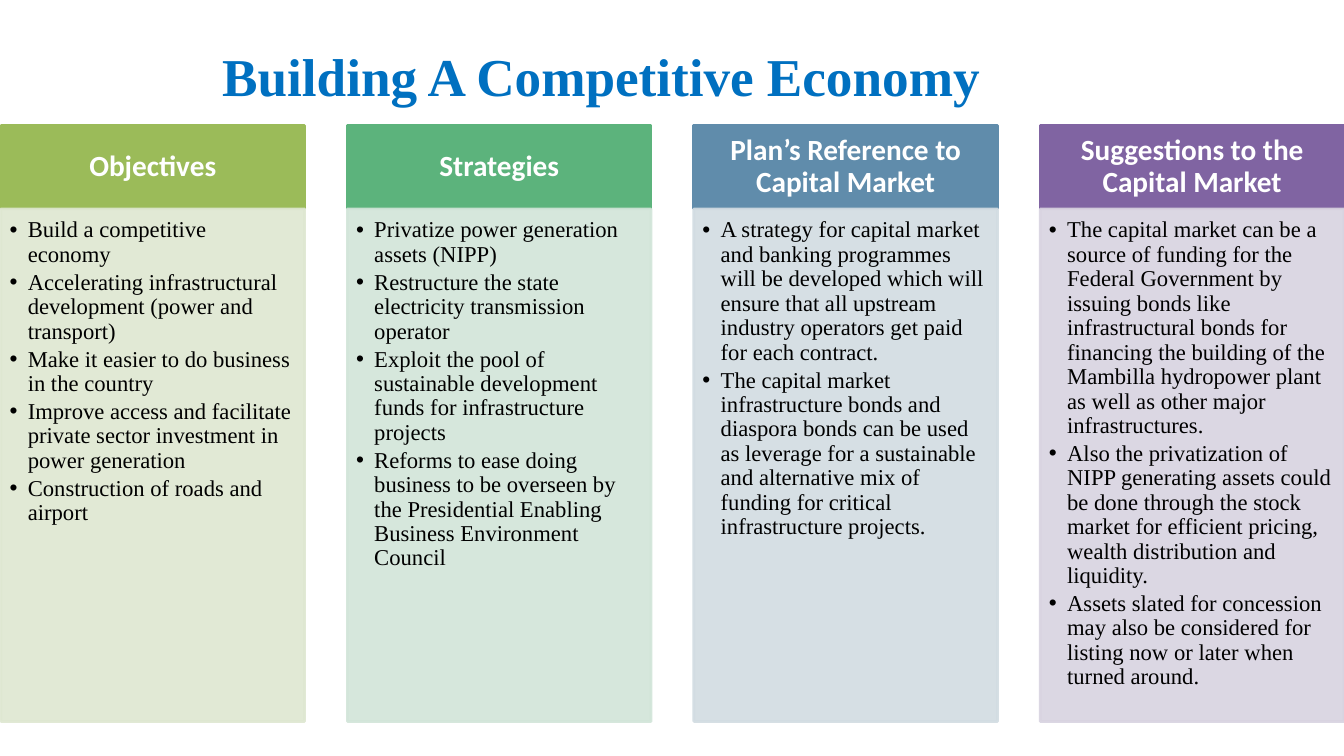
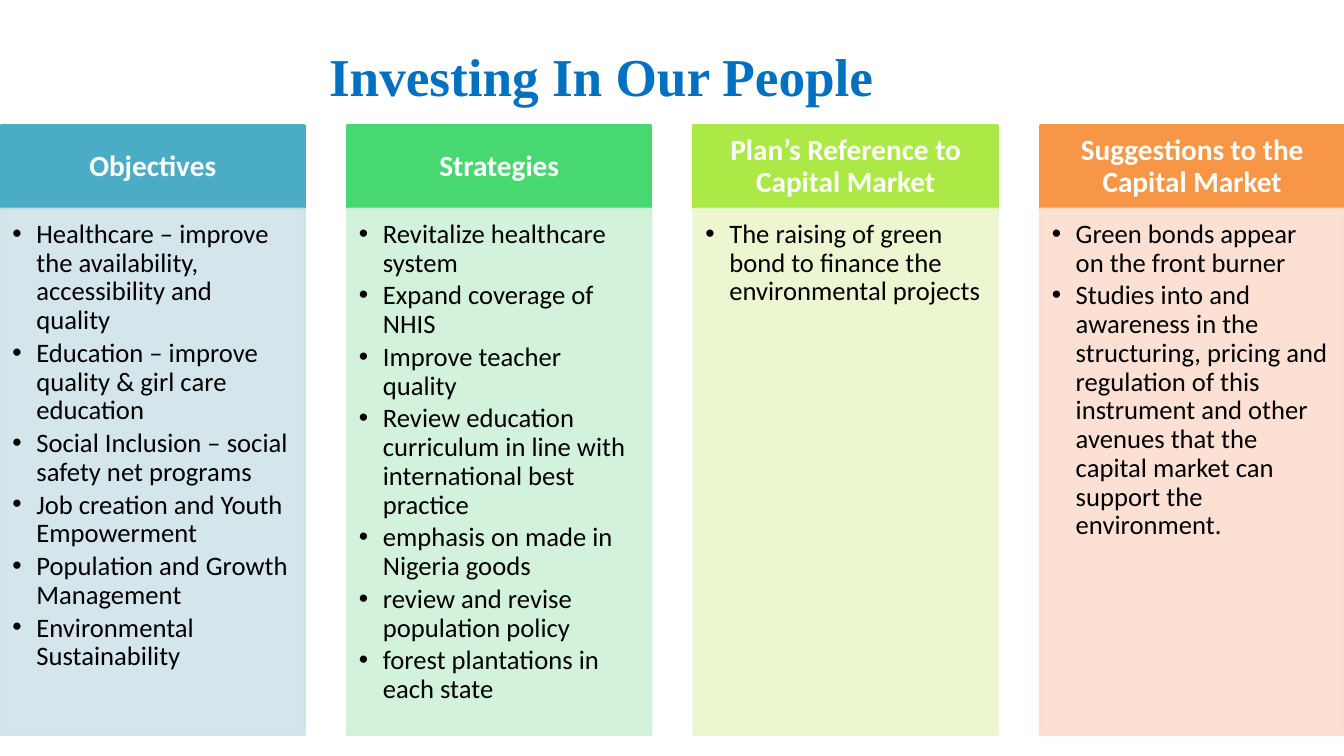
from lxml import etree
from pptx import Presentation
from pptx.dml.color import RGBColor
from pptx.enum.shapes import MSO_SHAPE
from pptx.enum.text import MSO_ANCHOR, PP_ALIGN
from pptx.oxml.ns import qn
from pptx.util import Inches, Pt

RECTANGLE = MSO_SHAPE.RECTANGLE
TOP, MIDDLE = MSO_ANCHOR.TOP, MSO_ANCHOR.MIDDLE
LEFT, CENTER = PP_ALIGN.LEFT, PP_ALIGN.CENTER

SERIF, SANS = "Times New Roman", "Calibri"
TITLE_BLUE, WHITE, BLACK = "0070C0", "FFFFFF", "000000"
HEADINGS = [
    "Objectives",
    "Strategies",
    "Plan’s Reference to Capital Market",
    "Suggestions to the Capital Market",
]

SLIDE_W, SLIDE_H = 14.03, 7.89
COLUMN_LEFT, COLUMN_W = 0.01, 3.17
COLUMN_PITCH = (SLIDE_W - COLUMN_W - COLUMN_LEFT) / (len(HEADINGS) - 1)
HEADER_TOP, HEADER_H = 1.31, 0.87
BODY_TOP = HEADER_TOP + HEADER_H
BODY_OPACITY = 90

# Each column is (header colour, body colour, bullet points).
SLIDES = [
    {
        "title": "Building A Competitive Economy",
        "font": SERIF, "size": 17, "indent": 0.19, "body_height": 5.35,
        "insets": (0.09, 0.1, 0.12, 0.15),
        "columns": [
            ("9BBB59", "DEE7D1", [
                "Build a competitive economy",
                "Accelerating infrastructural development (power and transport)",
                "Make it easier to do business in the country",
                "Improve access and facilitate private sector investment in "
                "power generation",
                "Construction of roads and airport",
            ]),
            ("5CB37C", "D2E5D9", [
                "Privatize power generation assets (NIPP)",
                "Restructure the state electricity transmission operator",
                "Exploit the pool of sustainable development funds for "
                "infrastructure projects",
                "Reforms to ease doing business to be overseen by the "
                "Presidential Enabling Business Environment Council",
            ]),
            ("608CAB", "D2DCE2", [
                "A strategy for capital market and banking programmes will be "
                "developed which will ensure that all upstream industry "
                "operators get paid for each contract.",
                "The capital market infrastructure bonds and diaspora bonds "
                "can be used as leverage for a sustainable and alternative mix "
                "of funding for critical infrastructure projects.",
            ]),
            ("8064A2", "D8D3E0", [
                "The capital market can be a source of funding for the Federal "
                "Government by issuing bonds like infrastructural bonds for "
                "financing the building of the Mambilla hydropower plant as "
                "well as other major infrastructures.",
                "Also the privatization of NIPP generating assets could be "
                "done through the stock market for efficient pricing, wealth "
                "distribution and liquidity.",
                "Assets slated for concession may also be considered for "
                "listing now or later when turned around.",
            ]),
        ],
    },
    {
        "title": "Investing In Our People",
        "font": SANS, "size": 20, "indent": 0.25, "body_height": 5.49,
        "insets": (0.12, 0.12, 0.16, 0.17),
        "columns": [
            ("4BACC6", "D0E3EA", [
                "Healthcare – improve the availability, accessibility and quality",
                "Education – improve quality & girl care education",
                "Social Inclusion – social safety net programs",
                "Job creation and Youth Empowerment",
                "Population and Growth Management",
                "Environmental Sustainability",
            ]),
            ("47D872", "CFF1D9", [
                "Revitalize healthcare system",
                "Expand coverage of NHIS",
                "Improve teacher quality",
                "Review education curriculum in line with international best "
                "practice",
                "emphasis on made in Nigeria goods",
                "review and revise population policy",
                "forest plantations in each state",
            ]),
            ("ACE946", "EBF7CE", [
                "The raising of green bond to finance the environmental projects",
            ]),
            ("F79646", "FCDDCF", [
                "Green bonds appear on the front burner",
                "Studies into and awareness in the structuring, pricing and "
                "regulation of this instrument and other avenues that the "
                "capital market can support the environment.",
            ]),
        ],
    },
]


def rgb(color):
    return RGBColor.from_string(color)


def add_bullet(para, indent):
    """Give the paragraph a round bullet with a hanging indent in inches."""
    para.level = 1
    props = para._p.get_or_add_pPr()
    props.set("marL", str(Inches(indent)))
    props.set("indent", str(-Inches(indent)))
    etree.SubElement(props, qn("a:buFont"), typeface="Arial")
    etree.SubElement(props, qn("a:buChar"), char="•")


def write_text(box, lines, font, size, color, insets, bold=False, align=LEFT,
               anchor=TOP, line_spacing=None, space_after=0, indent=None):
    """Fill a shape with paragraphs; insets run left, top, right, bottom."""
    frame = box.text_frame
    frame.word_wrap = True
    frame.vertical_anchor = anchor
    (frame.margin_left, frame.margin_top,
     frame.margin_right, frame.margin_bottom) = map(Inches, insets)
    for index, line in enumerate(lines):
        para = frame.add_paragraph() if index else frame.paragraphs[0]
        para.alignment = align
        para.line_spacing = line_spacing
        para.space_after = Pt(space_after)
        if indent:
            add_bullet(para, indent)
        span = para.add_run()
        span.text = line
        span.font.name = font
        span.font.size = Pt(size)
        span.font.bold = bold
        span.font.color.rgb = rgb(color)


def add_panel(page, left, top, height, color, opacity=100):
    """Draw a column-wide rectangle; opacity in percent covers fill and line."""
    panel = page.shapes.add_shape(
        RECTANGLE, Inches(left), Inches(top), Inches(COLUMN_W), Inches(height))
    panel.shadow.inherit = False
    panel.fill.solid()
    panel.fill.fore_color.rgb = rgb(color)
    panel.line.color.rgb = rgb(color)
    panel.line.width = Pt(2)
    if opacity < 100:
        for paint in panel._element.spPr.iter(qn("a:srgbClr")):
            etree.SubElement(paint, qn("a:alpha"), val=str(opacity * 1000))
    return panel


def add_title(page, title):
    box = page.shapes.add_textbox(
        Inches(-0.04), Inches(0.32), Inches(12.63), Inches(0.94))
    write_text(box, [title], SERIF, 40, TITLE_BLUE, (0.13, 0.06, 0.13, 0.06),
               bold=True, align=CENTER, anchor=MIDDLE)


def add_columns(page, content):
    size = content["size"]
    for index, (heading, column) in enumerate(zip(HEADINGS, content["columns"])):
        header_color, body_color, points = column
        left = COLUMN_LEFT + index * COLUMN_PITCH
        header = add_panel(page, left, HEADER_TOP, HEADER_H, header_color)
        write_text(header, [heading], SANS, 22, WHITE, (0.17, 0.1, 0.17, 0.1),
                   bold=True, align=CENTER, anchor=MIDDLE, line_spacing=0.9)
        body = add_panel(page, left, BODY_TOP, content["body_height"],
                         body_color, BODY_OPACITY)
        write_text(body, points, content["font"], size, BLACK,
                   content["insets"], line_spacing=0.9,
                   space_after=0.15 * size, indent=content["indent"])


def main():
    deck = Presentation()
    deck.slide_width, deck.slide_height = Inches(SLIDE_W), Inches(SLIDE_H)
    blank = deck.slide_layouts[6]
    for content in SLIDES:
        page = deck.slides.add_slide(blank)
        add_title(page, content["title"])
        add_columns(page, content)
    deck.save("out.pptx")


if __name__ == "__main__":
    main()
